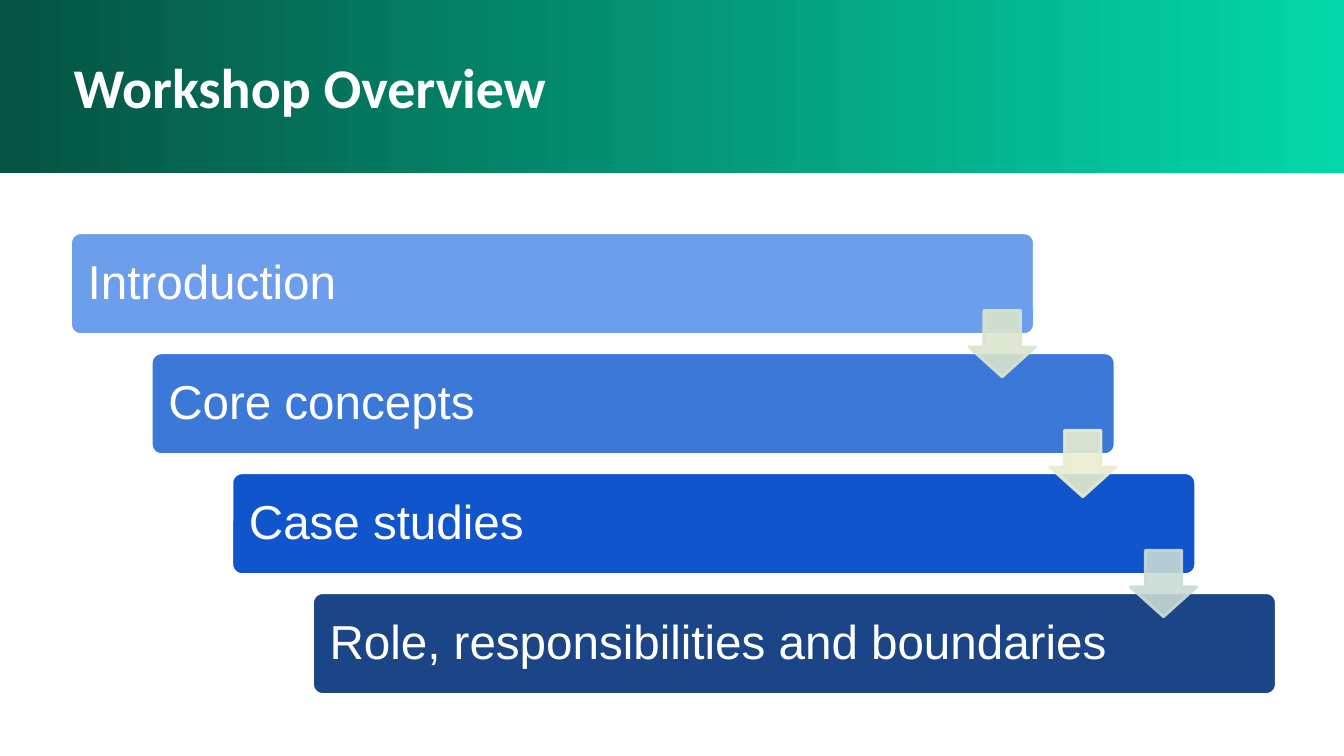
from lxml.etree import SubElement
from pptx import Presentation
from pptx.dml.color import RGBColor
from pptx.enum.shapes import MSO_SHAPE
from pptx.enum.text import MSO_ANCHOR, MSO_AUTO_SIZE, PP_ALIGN
from pptx.oxml.ns import qn
from pptx.util import Inches, Pt


def color(hex_string):
    """Turn a hex string into an RGB colour."""
    return RGBColor.from_string(hex_string)


def write_text(shape, text, inset, font_format):
    """Put one left-aligned, vertically centred line of text in a shape."""
    frame = shape.text_frame
    frame_format = {
        "word_wrap": True,
        "auto_size": MSO_AUTO_SIZE.NONE,
        "vertical_anchor": MSO_ANCHOR.MIDDLE,
        "margin_left": inset,
        "margin_top": inset,
        "margin_right": inset,
        "margin_bottom": inset,
    }
    for name, value in frame_format.items():
        setattr(frame, name, value)
    paragraph = frame.paragraphs[0]
    paragraph.alignment = PP_ALIGN.LEFT
    paragraph.line_spacing = 0.9
    run = paragraph.add_run()
    run.text = text
    for name, value in font_format.items():
        setattr(run.font, name, value)
    run.font.color.rgb = color("FFFFFF")


presentation = Presentation()
presentation.slide_width = Inches(13.33)
presentation.slide_height = Inches(7.5)
slide = presentation.slides.add_slide(presentation.slide_layouts[5])
shapes = slide.shapes

# Banner, placed behind the title
banner = shapes.add_shape(MSO_SHAPE.RECTANGLE, 0, 0, presentation.slide_width, Inches(1.72))
banner.shadow.inherit = False
banner.line.fill.background()
banner.fill.gradient()
banner.fill.gradient_angle = 0
for stop, position, stop_color in zip(banner.fill.gradient_stops, (0, 1), ("055342", "03D7A9")):
    stop.position = position
    stop.color.rgb = color(stop_color)
title = shapes.title
title.element.addprevious(banner.element)

# Title
title_place = {"left": 0.73, "top": 0.42, "width": 10.98, "height": 0.96}
for name, value in title_place.items():
    setattr(title, name, Inches(value))
write_text(title, "Workshop Overview", 0, {"name": "Calibri", "size": Pt(40), "bold": True})

# Staircase of topics
step_x, step_y = 0.8, 1.19
topics = [
    ("Introduction", "6D9EEB"),
    ("Core concepts", "3C78D8"),
    ("Case studies", "1155CC"),
    ("Role, responsibilities and boundaries", "1C4587"),
]
for index, (topic, bar_color) in enumerate(topics):
    bar = shapes.add_shape(
        MSO_SHAPE.ROUNDED_RECTANGLE,
        Inches(0.7 + index * step_x), Inches(2.31 + index * step_y),
        Inches(9.56), Inches(1.01),
    )
    bar.shadow.inherit = False
    bar.adjustments[0] = 0.1
    bar.fill.solid()
    bar.fill.fore_color.rgb = color(bar_color)
    bar.line.color.rgb = color("FFFFFF")
    bar.line.width = Pt(2)
    write_text(bar, topic, Inches(0.14), {"name": "Arial", "size": Pt(34)})

# Translucent arrows from each topic to the next
for index, arrow_color in enumerate(("D9E5CC", "E8EDCD", "CADBD5")):
    arrow = shapes.add_shape(
        MSO_SHAPE.DOWN_ARROW,
        Inches(9.61 + index * step_x), Inches(3.08 + index * step_y),
        Inches(0.66), Inches(0.66),
    )
    arrow.shadow.inherit = False
    arrow.adjustments[0] = 0.55
    arrow.adjustments[1] = 0.45
    arrow.line.width = Pt(2)
    for fill in (arrow.fill, arrow.line.fill):
        fill.solid()
        fill.fore_color.rgb = color(arrow_color)
    for color_element in arrow.element.spPr.iter(qn("a:srgbClr")):
        SubElement(color_element, qn("a:alpha"), val="89000")

presentation.save("out.pptx")
